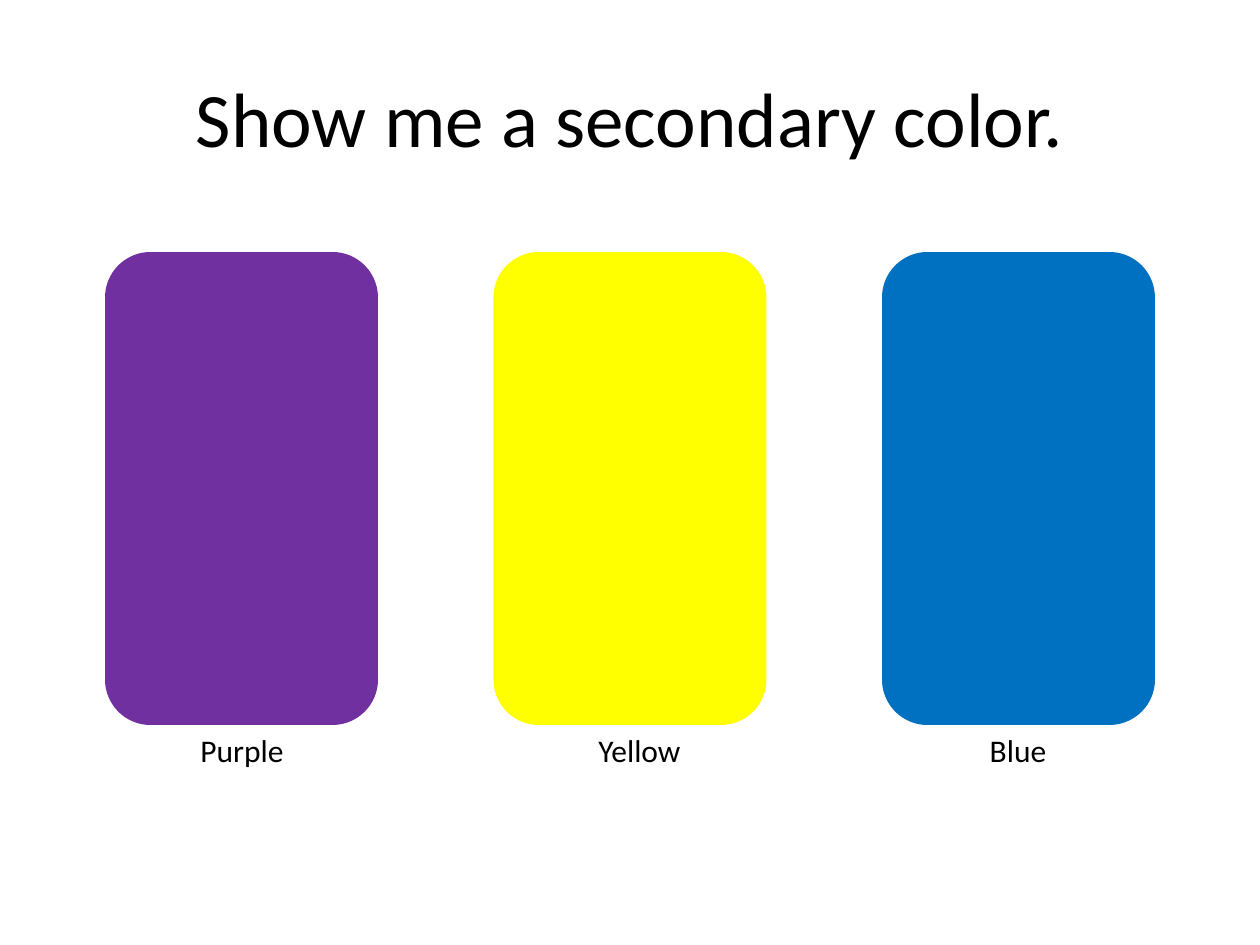
from pptx import Presentation, util as u
from pptx.dml.color import RGBColor
from pptx.enum import shapes, text

BLACK = RGBColor(0x00, 0x00, 0x00)
PURPLE = RGBColor(0x70, 0x30, 0xA0)
YELLOW = RGBColor(0xFF, 0xFF, 0x00)
BLUE = RGBColor(0x00, 0x70, 0xC0)

FONT = "Calibri"
DPI = 126
# name, colour, label inset from the card's left edge
CARDS = [("Purple", PURPLE, 11), ("Yellow", YELLOW, 20), ("Blue", BLUE, 10)]


def px(n):
    return u.Emu(round(n * 914400 / DPI))


def write(frame, words, size):
    frame.word_wrap = True
    para = frame.paragraphs[0]
    para.text = words
    para.alignment = text.PP_ALIGN.CENTER
    para.font.name = FONT
    para.font.size = u.Pt(size)
    para.font.color.rgb = BLACK


def add_title(slide, x, y, w, h):
    title = slide.shapes.title
    title.left, title.top, title.width, title.height = map(px, (x, y, w, h))
    title.text_frame.vertical_anchor = text.MSO_ANCHOR.MIDDLE
    write(title.text_frame, "Show me a secondary color.", 44)


def add_card(slide, x, y, w, h, name, color, inset):
    group = slide.shapes.add_group_shape()

    # Colour swatch
    swatch = group.shapes.add_shape(
        shapes.MSO_SHAPE.ROUNDED_RECTANGLE, px(x), px(y), px(w), px(h))
    swatch.shadow.inherit = False
    swatch.fill.solid()
    swatch.fill.fore_color.rgb = color
    swatch.line.fill.background()

    # Label under the swatch
    label = group.shapes.add_textbox(px(x + inset), px(y + h), px(252), px(50))
    write(label.text_frame, name, 18)
    label.text_frame.auto_size = text.MSO_AUTO_SIZE.SHAPE_TO_FIT_TEXT


def add_row(slide, x, y, w, h, card_w):
    step = (w - card_w) / (len(CARDS) - 1)
    for i, card in enumerate(CARDS):
        add_card(slide, x + i * step, y, card_w, h, *card)


def main():
    deck = Presentation()
    deck.slide_width, deck.slide_height = px(1260), px(945)
    slide = deck.slides.add_slide(deck.slide_layouts[5])
    add_title(slide, 63, 38, 1134, 158)
    add_row(slide, 105, 252, 1050, 473, 273)
    deck.save("out.pptx")


if __name__ == "__main__":
    main()
